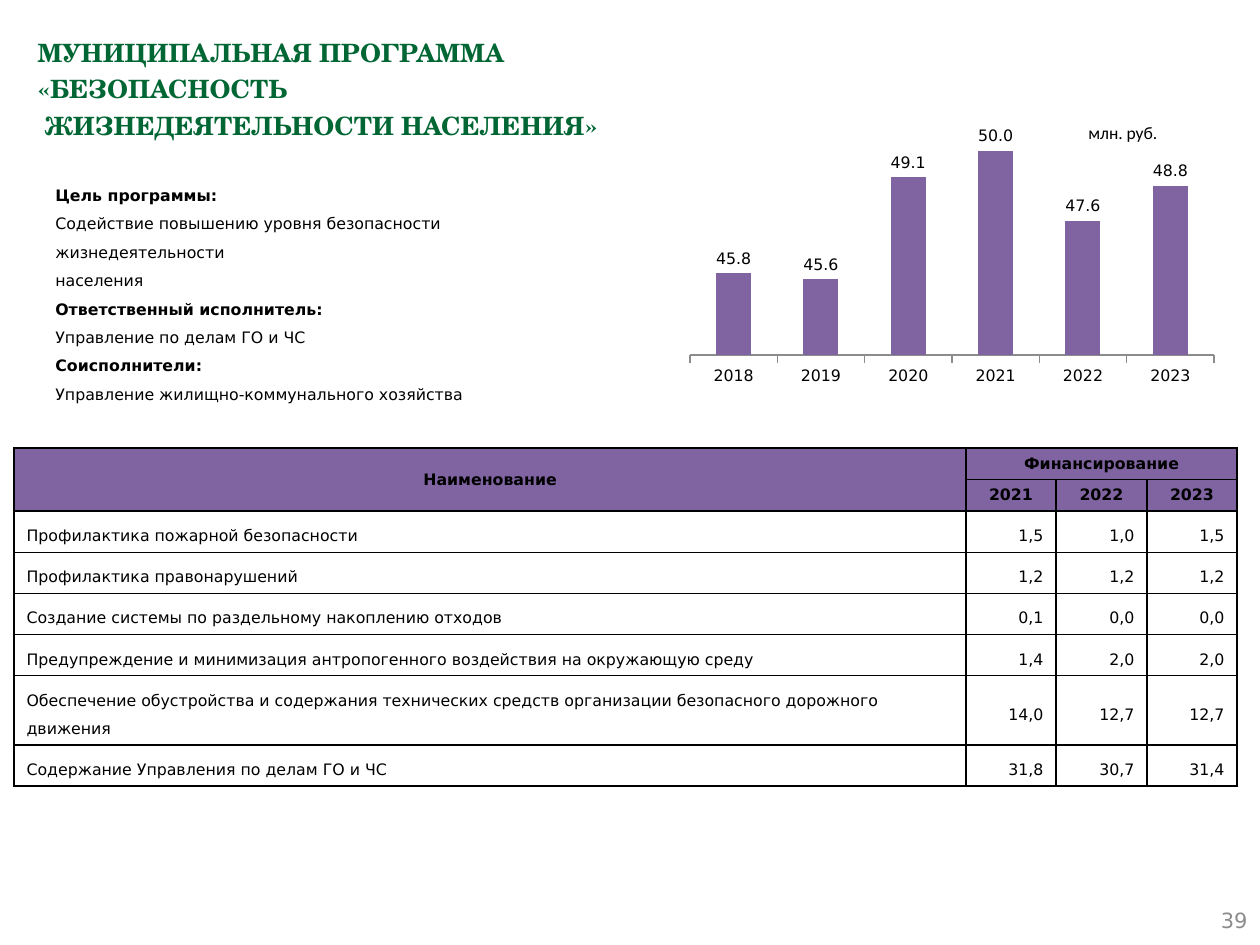
"""Build the municipal safety programme slide with its chart and funding table."""
from lxml import etree
from pptx import Presentation
from pptx import util as u
from pptx.chart.data import CategoryChartData
from pptx.dml.color import RGBColor
from pptx.enum import chart as charts, text
from pptx.oxml import parse_xml
from pptx.oxml.ns import nsdecls, qn

TITLE = "МУНИЦИПАЛЬНАЯ ПРОГРАММА\v«БЕЗОПАСНОСТЬ\v ЖИЗНЕДЕЯТЕЛЬНОСТИ НАСЕЛЕНИЯ»"
GOALS = [
    ("Цель программы:", True),
    ("Содействие повышению уровня безопасности жизнедеятельности", False),
    ("населения", False),
    ("Ответственный исполнитель:", True),
    ("Управление по делам ГО и ЧС", False),
    ("Соисполнители:", True),
    ("Управление жилищно-коммунального хозяйства", False),
]
SPENDING = {"2018": 45.8, "2019": 45.6, "2020": 49.1, "2021": 50.0, "2022": 47.6, "2023": 48.8}
FUNDING = [
    ("Наименование", "Финансирование", "", ""),
    ("", "2021", "2022", "2023"),
    ("Профилактика пожарной безопасности", "1,5", "1,0", "1,5"),
    ("Профилактика правонарушений", "1,2", "1,2", "1,2"),
    ("Создание системы по раздельному накоплению отходов", "0,1", "0,0", "0,0"),
    ("Предупреждение и минимизация антропогенного воздействия на окружающую среду",
     "1,4", "2,0", "2,0"),
    ("Обеспечение обустройства и содержания технических средств организации "
     "безопасного дорожного движения", "14,0", "12,7", "12,7"),
    ("Содержание Управления по делам ГО и ЧС", "31,8", "30,7", "31,4"),
]
HEADER_ROWS = 2
COLUMN_WIDTHS = [952, 90, 91, 90]
ROW_HEIGHTS = [31, 31, 40, 40, 40, 40, 68, 40]
PLOT_LAYOUT = {"x": 0.02, "y": 0.02, "w": 0.96, "h": 0.85}

BLACK = RGBColor(0, 0, 0)
GREEN = RGBColor(0x00, 0x66, 0x33)
GREY = RGBColor(0x8C, 0x8C, 0x8C)
PURPLE = RGBColor(0x80, 0x64, 0xA2)
SANS = "DejaVu Sans"
LEFT, CENTER, RIGHT = text.PP_ALIGN.LEFT, text.PP_ALIGN.CENTER, text.PP_ALIGN.RIGHT
MIDDLE = text.MSO_ANCHOR.MIDDLE


def px(*lengths):
    return [u.Emu(round(length * 914400 / 126)) for length in lengths]


def set_font(font, size, name=SANS, color=BLACK, bold=False):
    font.size, font.name, font.bold = u.Pt(size), name, bold
    font.color.rgb = color


def format_para(para, size, align=LEFT, spacing=1.0, **style):
    para.alignment, para.line_spacing = align, spacing
    for span in para.runs:
        set_font(span.font, size, **style)


def add_box(page, place, wording, wrap=True):
    frame = page.shapes.add_textbox(*px(*place)).text_frame
    frame.word_wrap = wrap
    frame.text = wording
    return frame


def add_title(page):
    title = page.shapes.title
    title.left, title.top, title.width, title.height = px(25, 25, 1211, 100)
    frame = title.text_frame
    frame.text = TITLE
    frame.word_wrap, frame.auto_size = True, text.MSO_AUTO_SIZE.NONE
    frame.vertical_anchor = text.MSO_ANCHOR.TOP
    format_para(frame.paragraphs[0], 14.4, spacing=1.2,
                name="TeX Gyre Schola", color=GREEN, bold=True)


def add_goals(page):
    frame = add_box(page, (43, 170, 581, 232), "\n".join(line for line, _ in GOALS))
    for para, (_, bold) in zip(frame.paragraphs, GOALS):
        format_para(para, 9, spacing=1.5, bold=bold)


def add_spending_chart(page):
    data = CategoryChartData(number_format="0.0")
    data.categories = list(SPENDING)
    data.add_series("Series 1", list(SPENDING.values()))
    chart = page.shapes.add_chart(
        charts.XL_CHART_TYPE.COLUMN_CLUSTERED, *px(679, 116, 546, 275), data).chart
    chart.has_legend = chart.has_title = False
    set_font(chart.font, 18, name="Calibri")

    years, amounts = chart.category_axis, chart.value_axis
    set_font(years.tick_labels.font, 9)
    years.format.line.color.rgb = GREY
    years.major_tick_mark = charts.XL_TICK_MARK.OUTSIDE
    amounts.minimum_scale, amounts.maximum_scale = 43, 51
    amounts.has_major_gridlines = amounts.visible = False

    plot = chart.plots[0]
    plot.gap_width, plot.vary_by_categories = 150, False
    fill = plot.series[0].format.fill
    fill.solid()
    fill.fore_color.rgb = PURPLE
    plot.has_data_labels = True
    labels = plot.data_labels
    labels.show_value = True
    labels.number_format, labels.number_format_is_linked = "#,##0.0", False
    labels.position = charts.XL_LABEL_POSITION.OUTSIDE_END
    set_font(labels.font, 9)

    area = chart.element.xpath(".//c:plotArea")[0]
    for layout in area.findall(qn("c:layout")):
        area.remove(layout)
    layout = etree.Element(qn("c:layout"))
    manual = etree.SubElement(layout, qn("c:manualLayout"))
    settings = {"layoutTarget": "inner", "xMode": "edge", "yMode": "edge", **PLOT_LAYOUT}
    for name, value in settings.items():
        etree.SubElement(manual, qn(f"c:{name}")).set("val", str(value))
    area.insert(0, layout)


def add_borders(cell):
    properties = cell._tc.get_or_add_tcPr()
    for side in "LRTB":
        properties.append(parse_xml(
            f'<a:ln{side} {nsdecls("a")} w="12700"><a:solidFill>'
            f'<a:srgbClr val="{BLACK}"/></a:solidFill></a:ln{side}>'))


def add_funding_table(page):
    place = px(14, 448, sum(COLUMN_WIDTHS), sum(ROW_HEIGHTS))
    table = page.shapes.add_table(len(FUNDING), len(COLUMN_WIDTHS), *place).table
    table.horz_banding = False
    for column, width in zip(table.columns, px(*COLUMN_WIDTHS)):
        column.width = width
    for row, height in zip(table.rows, px(*ROW_HEIGHTS)):
        row.height = height
    for r, line in enumerate(FUNDING):
        header = r < HEADER_ROWS
        for c, wording in enumerate(line):
            cell = table.cell(r, c)
            cell.text, cell.vertical_anchor = wording, MIDDLE
            add_borders(cell)
            if header:
                cell.fill.solid()
                cell.fill.fore_color.rgb = PURPLE
            else:
                cell.fill.background()
            align = CENTER if header else RIGHT if c else LEFT
            para = cell.text_frame.paragraphs[0]
            para.font.size = u.Pt(9)
            format_para(para, 9, align, 1.0 if header else 1.5, bold=header)
    table.cell(0, 0).merge(table.cell(1, 0))
    table.cell(0, 1).merge(table.cell(0, 3))


def main():
    deck = Presentation()
    deck.slide_width, deck.slide_height = px(1260, 945)
    page = deck.slides.add_slide(deck.slide_layouts[5])
    add_title(page)
    number = add_box(page, (966, 895, 294, 50), "39")
    number.vertical_anchor = MIDDLE
    format_para(number.paragraphs[0], 12, RIGHT, color=GREY)
    add_spending_chart(page)
    add_funding_table(page)
    add_goals(page)
    unit = add_box(page, (1076, 116, 101, 34), "млн. руб.", wrap=False)
    format_para(unit.paragraphs[0], 10, name="Calibri")
    deck.save("out.pptx")


if __name__ == "__main__":
    main()
